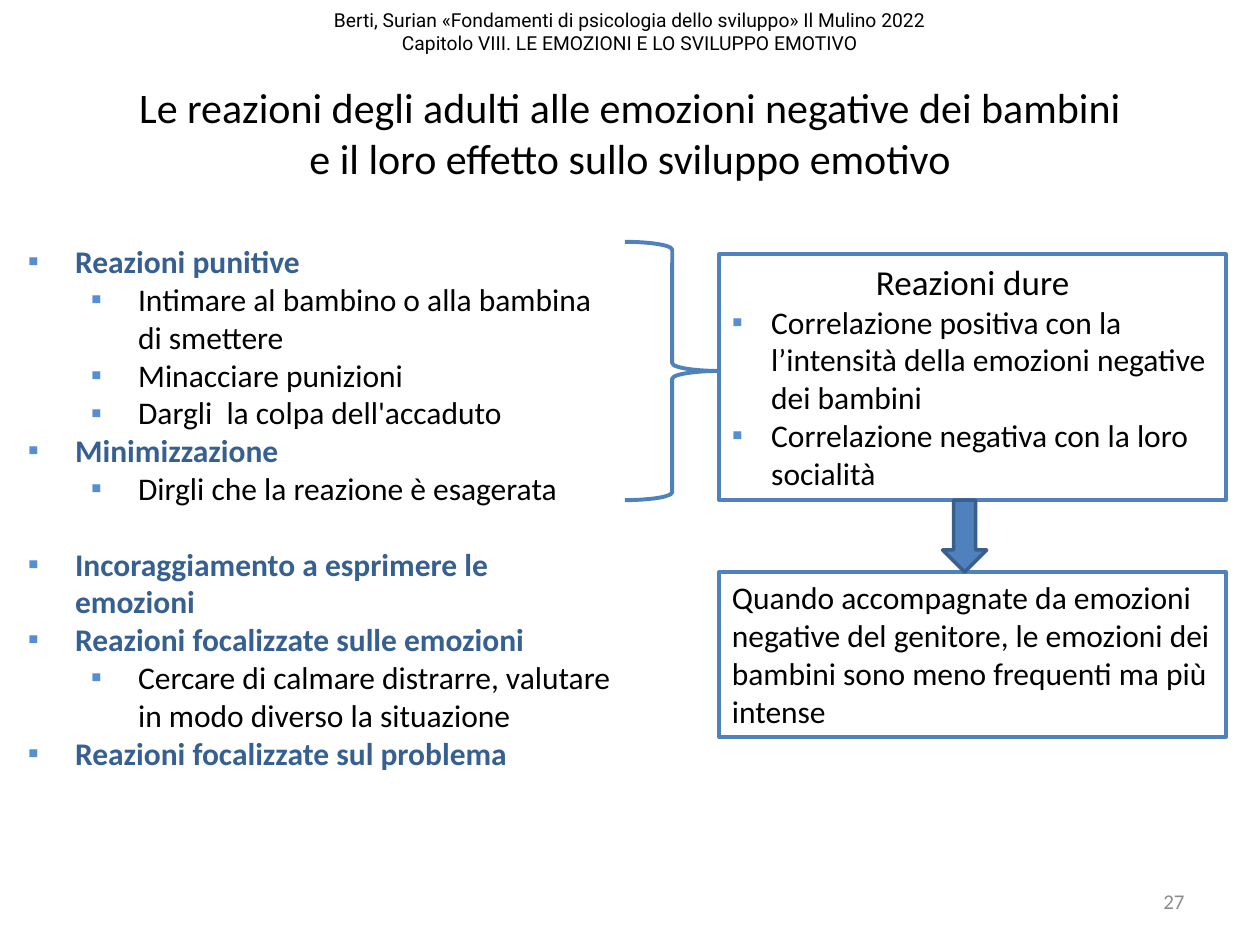
from dataclasses import dataclass

from lxml.etree import SubElement
from pptx import Presentation
from pptx.dml.color import RGBColor
from pptx.enum.shapes import MSO_SHAPE
from pptx.enum.text import MSO_ANCHOR, MSO_AUTO_SIZE, PP_ALIGN
from pptx.oxml.ns import qn
from pptx.util import Pt

HUES = {
    "ink": "000000", "paper": "FFFFFF", "head": "376092", "mark": "558ED5",
    "edge": "4F81BD", "rim": "3A5F8C", "grey": "8C8C8C",
}


@dataclass
class Box:
    left: float
    top: float
    width: float
    height: float

    def args(self) -> tuple:
        return Pt(self.left), Pt(self.top), Pt(self.width), Pt(self.height)


@dataclass
class Para:
    text: str
    size: float = 18
    hue: str = "ink"
    bold: bool = False
    font: str = "Calibri"
    align: PP_ALIGN = PP_ALIGN.LEFT
    level: int = 0
    left: float = 0
    hang: float = 0
    gap: float = 0


def head(text: str, gap: float = 0) -> Para:
    return Para(text, hue="head", bold=True, left=27, hang=27, gap=gap)


def item(text: str) -> Para:
    return Para(text, level=1, left=63, hang=27)


def point(text: str) -> Para:
    return Para(text, left=22.5, hang=22.5)


def color(key: str) -> RGBColor:
    return RGBColor.from_string(HUES[key])


def indent(para, spec: Para) -> None:
    """Set margins and, for a hanging paragraph, its square bullet."""
    props = para._p.get_or_add_pPr()
    props.set("marL", str(Pt(spec.left)))
    props.set("indent", str(-Pt(spec.hang)))
    if not spec.hang:
        SubElement(props, qn("a:buNone"))
        return
    tint = SubElement(props, qn("a:buClr"))
    SubElement(tint, qn("a:srgbClr"), val=HUES["mark"])
    SubElement(props, qn("a:buFont"), typeface="Arial")
    SubElement(props, qn("a:buChar"), char="▪")


def write(shape, paras: list[Para], anchor=MSO_ANCHOR.TOP) -> None:
    frame = shape.text_frame
    frame.word_wrap = True
    frame.auto_size = MSO_AUTO_SIZE.NONE
    frame.vertical_anchor = anchor
    for n, spec in enumerate(paras):
        para = frame.add_paragraph() if n else frame.paragraphs[0]
        indent(para, spec)
        para.level = spec.level
        para.alignment = spec.align
        para.space_before = Pt(spec.gap)
        for k, line in enumerate(spec.text.split("\n")):
            if k:
                para.add_line_break()
            run = para.add_run()
            run.text = line
            run.font.name = spec.font
            run.font.size = Pt(spec.size)
            run.font.bold = spec.bold
            run.font.color.rgb = color(spec.hue)


def place(shape, box: Box):
    shape.left, shape.top, shape.width, shape.height = box.args()
    return shape


def draw(slide, kind: MSO_SHAPE, box: Box, fill: str = "",
         line: str = "edge", width: float = 2.25):
    shape = slide.shapes.add_shape(kind, *box.args())
    shape.shadow.inherit = False
    if fill:
        shape.fill.solid()
        shape.fill.fore_color.rgb = color(fill)
    else:
        shape.fill.background()
    shape.line.color.rgb = color(line)
    shape.line.width = Pt(width)
    return shape


def label(slide, box: Box, para: Para) -> None:
    write(slide.shapes.add_textbox(*box.args()), [para], MSO_ANCHOR.MIDDLE)


TITLE = Para(
    "Le reazioni degli adulti alle emozioni negative dei bambini\n"
    "e il loro effetto sullo sviluppo emotivo",
    size=24, align=PP_ALIGN.CENTER)
SOURCE = Para(
    "Berti, Surian «Fondamenti di psicologia dello sviluppo» Il Mulino 2022\n"
    "Capitolo VIII. LE EMOZIONI E LO SVILUPPO EMOTIVO",
    size=11, font="Roboto", align=PP_ALIGN.CENTER)
NUMBER = Para("27", size=12, hue="grey", align=PP_ALIGN.RIGHT)
LIST = [
    head("Reazioni punitive"),
    item("Intimare al bambino o alla bambina di smettere"),
    item("Minacciare punizioni"),
    item("Dargli  la colpa dell'accaduto"),
    head("Minimizzazione"),
    item("Dirgli che la reazione è esagerata"),
    head("Incoraggiamento a esprimere le emozioni", gap=21.6),
    head("Reazioni focalizzate sulle emozioni"),
    item("Cercare di calmare distrarre, valutare in modo diverso la situazione"),
    head("Reazioni focalizzate sul problema"),
]
HARSH = [
    Para("Reazioni dure", size=20, align=PP_ALIGN.CENTER),
    point("Correlazione positiva con la l’intensità della emozioni negative "
          "dei bambini"),
    point("Correlazione negativa con la loro socialità"),
]
EFFECT = [Para("Quando accompagnate da emozioni negative del genitore, le "
               "emozioni dei bambini sono meno frequenti ma più intense")]


def main() -> None:
    deck = Presentation()
    deck.slide_width, deck.slide_height = Pt(720), Pt(540)
    slide = deck.slides.add_slide(deck.slide_layouts[1])

    label(slide, Box(0, -13.5, 720, 62.5), SOURCE)
    label(slide, Box(516, 500.5, 168, 28.75), NUMBER)
    write(place(slide.shapes.title, Box(0, 43.2, 720, 65.5)), [TITLE])

    body = place(slide.placeholders[1], Box(8.7, 134.8, 348.4, 334))
    body.fill.solid()
    body.fill.fore_color.rgb = color("paper")
    write(body, LIST)

    harsh = Box(411.1, 145.4, 289.4, 140.4)
    effect = Box(harsh.left, 326.9, harsh.width, 94.3)
    foot = harsh.top + harsh.height
    draw(slide, MSO_SHAPE.RIGHT_BRACE, Box(357.1, 138.2, 54, foot - 138.2))
    for box, paras in ((harsh, HARSH), (effect, EFFECT)):
        write(draw(slide, MSO_SHAPE.RECTANGLE, box, "paper"), paras)
    draw(slide, MSO_SHAPE.DOWN_ARROW,
         Box(538.6, foot, 25.2, effect.top - foot), "edge", "rim", 2)

    deck.save("out.pptx")


if __name__ == "__main__":
    main()
